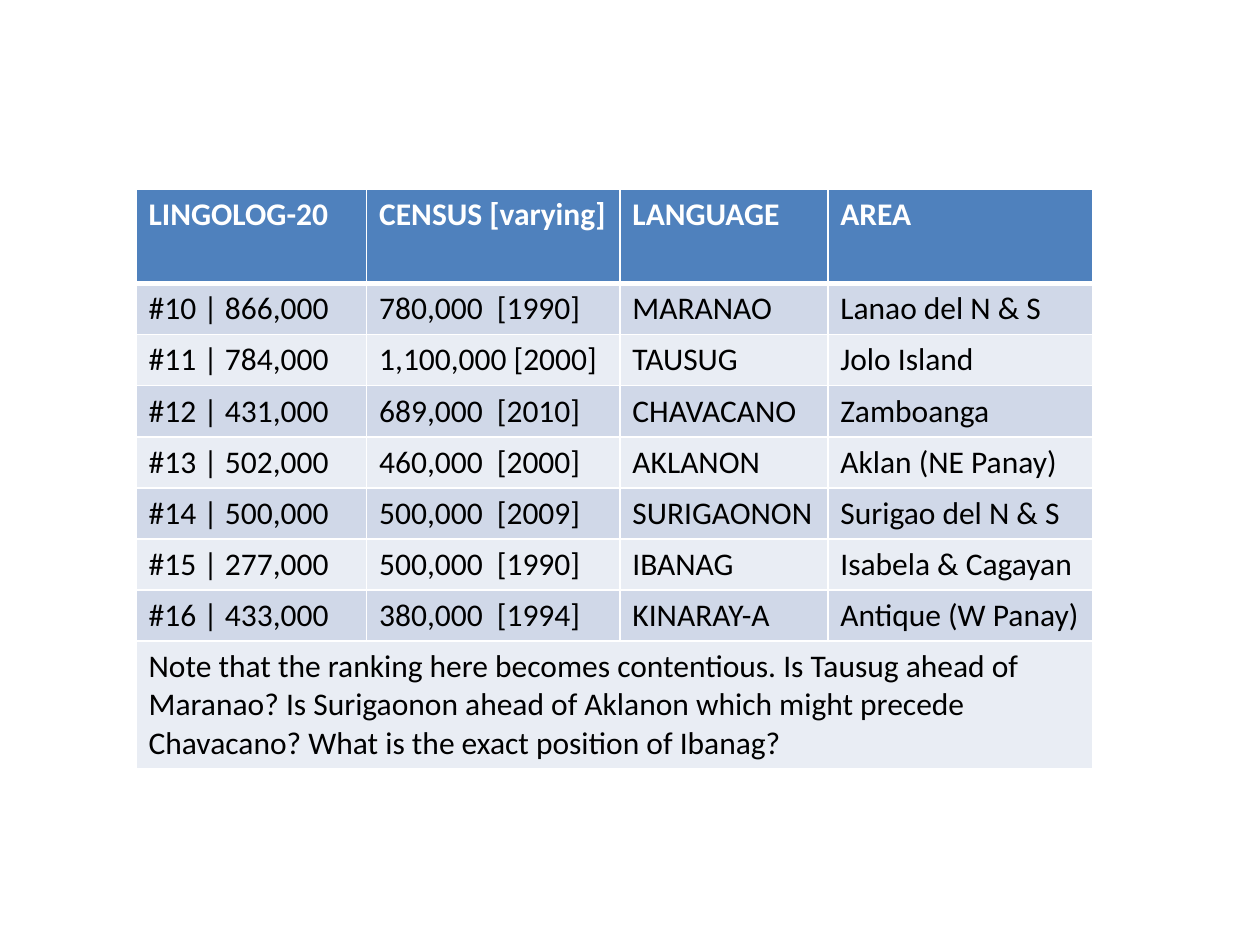
from pptx import Presentation
from pptx.dml.color import RGBColor
from pptx.oxml import parse_xml
from pptx.oxml.ns import nsdecls
from pptx.util import Inches, Pt

HEADINGS = ["LINGOLOG-20", "CENSUS [varying]", "LANGUAGE", "AREA"]
LANGUAGES = [
    ["#10 | 866,000", "780,000  [1990]", "MARANAO", "Lanao del N & S"],
    ["#11 | 784,000", "1,100,000 [2000]", "TAUSUG", "Jolo Island"],
    ["#12 | 431,000", "689,000  [2010]", "CHAVACANO", "Zamboanga"],
    ["#13 | 502,000", "460,000  [2000]", "AKLANON", "Aklan (NE Panay)"],
    ["#14 | 500,000", "500,000  [2009]", "SURIGAONON", "Surigao del N & S"],
    ["#15 | 277,000", "500,000  [1990]", "IBANAG", "Isabela & Cagayan"],
    ["#16 | 433,000", "380,000  [1994]", "KINARAY-A", "Antique (W Panay)"],
]
NOTE = (
    "Note that the ranking here becomes contentious. Is Tausug ahead of Maranao? "
    "Is Surigaonon ahead of Aklanon which might precede Chavacano? "
    "What is the exact position of Ibanag?"
)
COLUMN_SHARES = [1.83, 2.01, 1.65, 2.1]
HEADER_HEIGHT, NOTE_HEIGHT = 0.75, 1.01
TABLE_BOX = (1.08, 1.5, 7.59, 4.6)
HEADER_FILL, BAND_FILLS = "4F81BD", ["D0D8E8", "E9EDF4"]
HEADER_FONT = {"name": "Calibri", "size": Pt(18), "bold": True}
BODY_FONT = {**HEADER_FONT, "bold": False}


def color(value):
    """Turn a hex string into a colour."""
    return RGBColor.from_string(value)


def set_borders(cell, widths):
    """Draw white borders; widths maps each side to its points."""
    properties = cell._tc.get_or_add_tcPr()
    for position, (side, width) in enumerate(widths.items()):
        properties.insert(position, parse_xml(
            f'<a:ln{side} {nsdecls("a")} w="{Pt(width)}"><a:solidFill>'
            f'<a:srgbClr val="FFFFFF"/></a:solidFill></a:ln{side}>'
        ))


def write_cell(cell, text, font_values, font_color):
    """Put formatted text in a cell."""
    span = cell.text_frame.paragraphs[0].add_run()
    span.text = text
    for name, value in font_values.items():
        setattr(span.font, name, value)
    span.font.color.rgb = color(font_color)


def style_cell(cell, row_index):
    """Give a cell the fill and borders of its row."""
    cell.fill.solid()
    fill = BAND_FILLS[(row_index - 1) % 2] if row_index else HEADER_FILL
    cell.fill.fore_color.rgb = color(fill)
    top = 3 if row_index == 1 else 1
    bottom = 3 if row_index == 0 else 1
    set_borders(cell, {"L": 1, "R": 1, "T": top, "B": bottom})


def add_language_table(page, box):
    """Place the ranking table with its closing note in the box."""
    rows = [HEADINGS, *LANGUAGES, [NOTE]]
    left, top, width, height = box
    frame = page.shapes.add_table(
        len(rows), len(HEADINGS), *(Inches(length) for length in box)
    )
    table = frame.table
    for column, share in zip(table.columns, COLUMN_SHARES):
        column.width = Inches(width * share / sum(COLUMN_SHARES))
    body_height = (height - HEADER_HEIGHT - NOTE_HEIGHT) / len(LANGUAGES)
    heights = [HEADER_HEIGHT, *[body_height] * len(LANGUAGES), NOTE_HEIGHT]
    for row_index, (row, row_height) in enumerate(zip(table.rows, heights)):
        row.height = Inches(row_height)
        for cell in row.cells:
            style_cell(cell, row_index)
        font = BODY_FONT if row_index else HEADER_FONT
        font_color = "000000" if row_index else "FFFFFF"
        for cell, text in zip(row.cells, rows[row_index]):
            write_cell(cell, text, font, font_color)
    last = len(rows) - 1
    table.cell(last, 0).merge(table.cell(last, len(HEADINGS) - 1))


def main():
    """Build the deck and save it."""
    deck = Presentation()
    deck.slide_width, deck.slide_height = Inches(10), Inches(7.5)
    page = deck.slides.add_slide(deck.slide_layouts[6])
    add_language_table(page, TABLE_BOX)
    deck.save("out.pptx")


if __name__ == "__main__":
    main()
